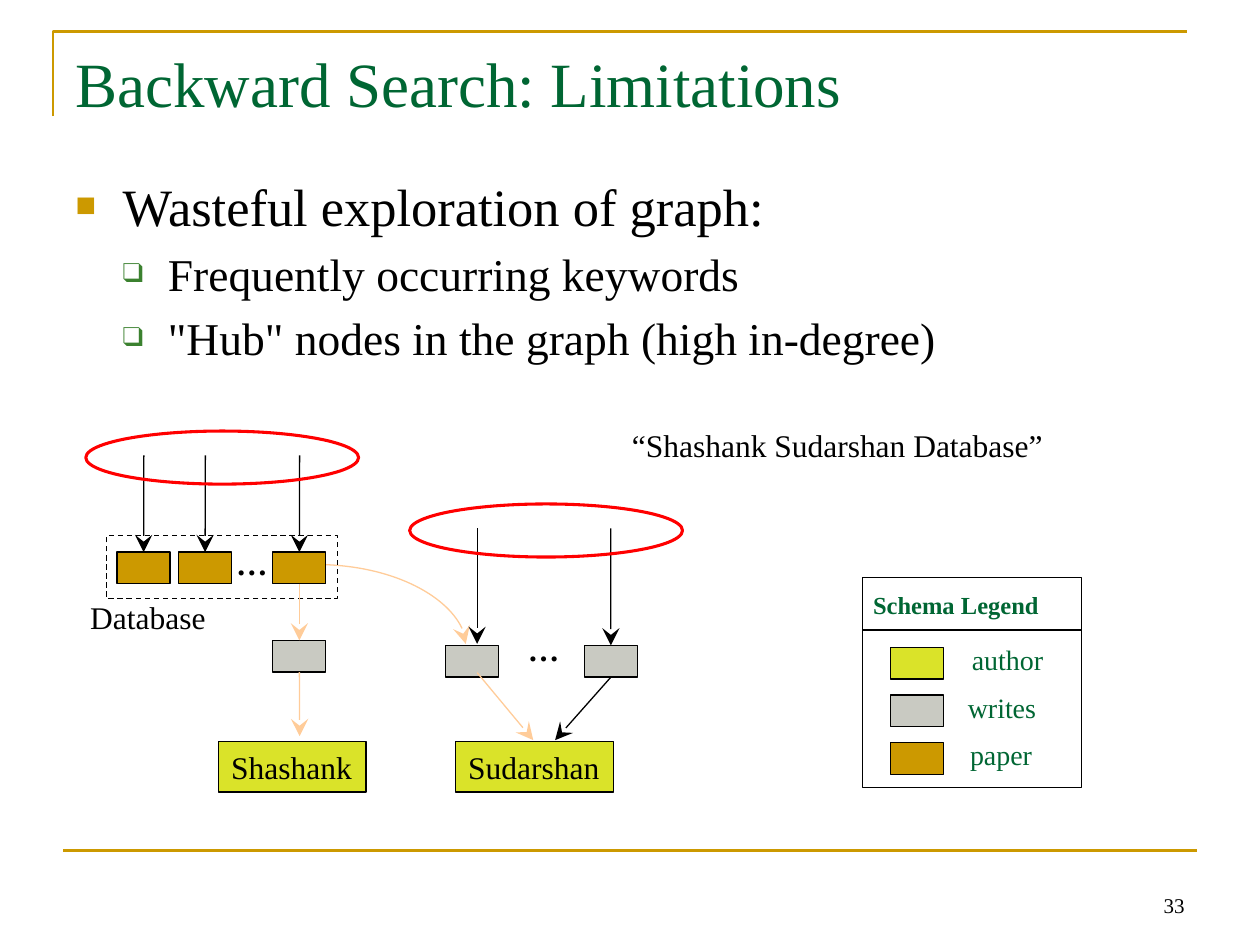
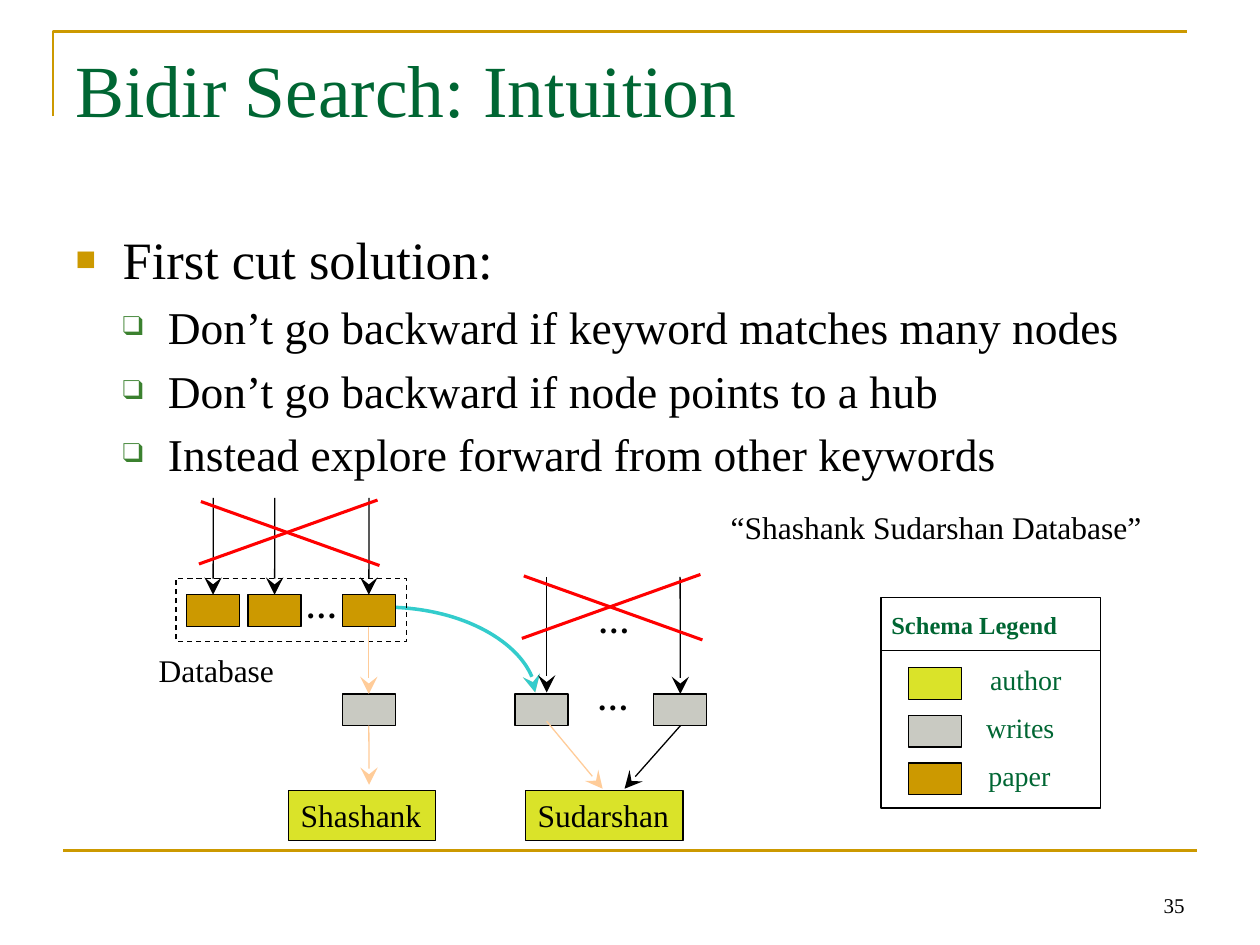
from dataclasses import dataclass
from typing import NamedTuple

import lxml.etree
import pptx
import pptx.dml.color
import pptx.enum.dml
import pptx.enum.shapes
import pptx.enum.text
import pptx.oxml.ns
import pptx.shapes.autoshape
import pptx.shapes.connector
import pptx.slide
import pptx.text.text
import pptx.util

FONT = "Times New Roman"
GOLD, GREEN, LIME, GREY = "CC9900", "006633", "DAE329", "C9CAC2"
BLACK, RED, PEACH, CYAN = "000000", "FF0000", "FFCC99", "33CCCC"
TILE_WIDTH, TILE_HEIGHT = 1.07, 0.64

Shape = pptx.shapes.autoshape.Shape
Connector = pptx.shapes.connector.Connector
Slide = pptx.slide.Slide
Preset = pptx.enum.shapes.MSO_SHAPE
Align = pptx.enum.text.PP_ALIGN
Anchor = pptx.enum.text.MSO_ANCHOR


class Spot(NamedTuple):
    """A place on the slide, in centimetres."""
    x: float
    y: float

    def shifted(self, right: float, down: float) -> "Spot":
        return Spot(self.x + right, self.y + down)


class Bullet(NamedTuple):
    character: str
    color: str
    percent: int
    margin: float
    indent: float
    text_size: int


class LegendRow(NamedTuple):
    label: str
    color: str
    label_left: float
    label_width: float


@dataclass(frozen=True)
class SearchSlide:
    title: str
    title_size: int
    body_top: float
    points: tuple[str, ...]
    paper_frame: Spot
    writes_tops: tuple[float, float, float]
    database_label: Spot
    query: Spot
    legend: Spot
    number: str
    curves: tuple[tuple[str, float], ...]


BULLETS = (Bullet("■", GOLD, 65, 0.95, -0.95, 30), Bullet("❑", "3B812F", 60, 1.86, -0.91, 26))
LEGEND_ROWS = (LegendRow("author", LIME, 1.93, 1.98), LegendRow("writes", GREY, 1.86, 1.9),
               LegendRow("paper", GOLD, 1.9, 1.78))
LIMITATIONS = SearchSlide(
    "Backward Search: Limitations", 36, 3.38,
    ("Wasteful exploration of graph:", "Frequently occurring keywords",
     '"Hub" nodes in the graph (high in-degree)'),
    Spot(2.15, 10.8), (12.91, 13.01, 13.01), Spot(1.57, 11.93), Spot(12.49, 8.46),
    Spot(17.39, 11.64), "33", ((PEACH, 0.75),))
INTUITION = SearchSlide(
    "Bidir Search: Intuition", 42, 4.45,
    ("First cut solution:", "Don’t go backward if keyword matches many nodes",
     "Don’t go backward if node points to a hub", "Instead explore forward from other keywords"),
    Spot(3.55, 11.66), (13.99, 13.99, 13.99), Spot(2.95, 13.0), Spot(14.48, 10.11),
    Spot(17.76, 12.05), "35", ((PEACH, 0.75), (CYAN, 2)))


def rgb(color: str) -> pptx.dml.color.RGBColor:
    return pptx.dml.color.RGBColor.from_string(color)


def add_xml(parent: lxml.etree._Element, tag: str, **attributes: str) -> lxml.etree._Element:
    return lxml.etree.SubElement(parent, pptx.oxml.ns.qn(tag), attributes)


def format_runs(paragraph: pptx.text.text._Paragraph, size: float, color: str,
                bold: bool = False) -> None:
    for run in paragraph.runs:
        run.font.name = FONT
        run.font.size = pptx.util.Pt(size)
        run.font.bold = bold
        run.font.color.rgb = rgb(color)


def place(shape: Shape, left: float, top: float, width: float, height: float) -> None:
    shape.left, shape.top = pptx.util.Cm(left), pptx.util.Cm(top)
    shape.width, shape.height = pptx.util.Cm(width), pptx.util.Cm(height)


def outline(shape: Shape, color: str, width: float, fill: str | None = None) -> None:
    shape.shadow.inherit = False
    shape.line.color.rgb = rgb(color)
    shape.line.width = pptx.util.Pt(width)
    if fill:
        shape.fill.solid()
        shape.fill.fore_color.rgb = rgb(fill)
    else:
        shape.fill.background()


def add_outlined(slide: Slide, spot: Spot, width: float, height: float, fill: str | None = None,
                 color: str = BLACK, weight: float = 0.75,
                 preset: Preset = Preset.RECTANGLE) -> Shape:
    shape = slide.shapes.add_shape(preset, *map(pptx.util.Cm, (*spot, width, height)))
    outline(shape, color, weight, fill)
    return shape


def add_tile(slide: Slide, spot: Spot, color: str) -> Shape:
    return add_outlined(slide, spot, TILE_WIDTH, TILE_HEIGHT, color)


def set_label(shape: Shape, text: str, size: float = 18, color: str = BLACK,
              bold: bool = False, align: Align = Align.LEFT) -> None:
    """Write one unwrapped line in the shape."""
    frame = shape.text_frame
    frame.text = text
    frame.word_wrap = False
    frame.vertical_anchor = Anchor.TOP
    frame.paragraphs[0].alignment = align
    format_runs(frame.paragraphs[0], size, color, bold)


def add_label(slide: Slide, spot: Spot, width: float, text: str, size: float = 18,
              color: str = BLACK, bold: bool = False, align: Align = Align.LEFT) -> None:
    height = size * 0.042 + 0.26
    shape = slide.shapes.add_textbox(*map(pptx.util.Cm, (*spot, width, height)))
    set_label(shape, text, size, color, bold, align)


def add_line(slide: Slide, start: Spot | Shape, end: Spot | Shape, color: str = BLACK,
             weight: float = 0.75, arrow: bool = False, curved: bool = False) -> Connector:
    """Draw from a spot or a shape's bottom to a spot or a shape's top."""
    kinds = pptx.enum.shapes.MSO_CONNECTOR
    ends = [spot if isinstance(spot, Spot) else Spot(0, 0) for spot in (start, end)]
    connector = slide.shapes.add_connector(
        kinds.CURVE if curved else kinds.STRAIGHT,
        *(pptx.util.Cm(length) for spot in ends for length in spot))
    if not isinstance(start, Spot):
        connector.begin_connect(start, 2)
    if not isinstance(end, Spot):
        connector.end_connect(end, 0)
    connector.line.color.rgb = rgb(color)
    connector.line.width = pptx.util.Pt(weight)
    properties = connector._element.spPr
    if curved:
        properties.find(pptx.oxml.ns.qn("a:prstGeom")).set("prst", "curvedConnector2")
    if arrow:
        add_xml(properties.find(pptx.oxml.ns.qn("a:ln")), "a:tailEnd",
                type="stealth", w="lg", len="lg")
    add_xml(properties, "a:effectLst")
    return connector


def add_bands(slide: Slide) -> None:
    """Draw the gold rules and hand them to the slide's layout."""
    corner = [Spot(1.07, 2.34), Spot(1.07, 0.64), Spot(23.93, 0.64)]
    first, *rest = [tuple(map(pptx.util.Cm, spot)) for spot in corner]
    builder = slide.shapes.build_freeform(*first)
    builder.add_line_segments(rest, close=False)
    bracket = builder.convert_to_shape()
    outline(bracket, GOLD, 1.5)
    footer_rule = add_line(slide, Spot(1.27, 17.15), Spot(24.13, 17.15), GOLD, 1.5)
    for band in (bracket, footer_rule):
        slide.slide_layout.shapes._spTree.append(band._element)


def fill_placeholders(slide: Slide, content: SearchSlide) -> None:
    title, body = slide.placeholders
    place(title, 1.27, 0.76, 22.86, 3.18)
    place(body, 1.27, content.body_top, 22.86, 12.57)
    title.text_frame.text = content.title
    body.text_frame.text = "\n".join(content.points)
    for shape in (title, body):
        shape.text_frame.auto_size = pptx.enum.text.MSO_AUTO_SIZE.NONE
        shape.text_frame.vertical_anchor = Anchor.TOP
    heading = title.text_frame.paragraphs[0]
    heading.alignment = Align.LEFT
    format_runs(heading, content.title_size, GREEN)
    for index, paragraph in enumerate(body.text_frame.paragraphs):
        paragraph.level = min(index, 1)
        bullet = BULLETS[paragraph.level]
        format_runs(paragraph, bullet.text_size, BLACK)
        properties = paragraph._p.get_or_add_pPr()
        properties.set("marL", str(pptx.util.Cm(bullet.margin)))
        properties.set("indent", str(pptx.util.Cm(bullet.indent)))
        add_xml(add_xml(properties, "a:buClr"), "a:srgbClr", val=bullet.color)
        add_xml(properties, "a:buSzPct", val=str(bullet.percent * 1000))
        add_xml(properties, "a:buFont", typeface=FONT)
        add_xml(properties, "a:buChar", char=bullet.character)


def add_number(slide: Slide, number: str) -> None:
    box = slide.shapes.add_textbox(*map(pptx.util.Cm, (18.2, 17.35, 5.93, 1.27)))
    set_label(box, number, 12, align=Align.RIGHT)
    box.text_frame.word_wrap = True
    box.text_frame.vertical_anchor = Anchor.BOTTOM


def add_legend(slide: Slide, corner: Spot) -> None:
    add_outlined(slide, corner, 4.42, 4.24)
    add_line(slide, corner.shifted(0, 1.06), corner.shifted(4.42, 1.06))
    add_label(slide, corner.shifted(-0.04, 0.13), 3.89, "Schema Legend", 14, GREEN, True)
    for index, row in enumerate(LEGEND_ROWS):
        top = 1.41 + 0.96 * index
        add_tile(slide, corner.shifted(0.56, top), row.color)
        add_label(slide, corner.shifted(row.label_left, top - 0.22), row.label_width,
                  row.label, 16, GREEN, align=Align.CENTER)


def add_author(slide: Slide, spot: Spot, width: float, name: str) -> None:
    set_label(add_outlined(slide, spot, width, 1.02, LIME), name)


def add_graph(slide: Slide, content: SearchSlide) -> None:
    """Draw papers, writes tuples and authors with the edges between them."""
    frame = content.paper_frame
    left = frame.x
    hub_top = content.writes_tops[1]
    author_top = hub_top + 1.94
    for color, weight in content.curves:
        add_line(slide, frame.shifted(4.2, 0.58), Spot(left + 7.24, hub_top - 0.03),
                 color, weight, arrow=True, curved=True)
    border = add_outlined(slide, frame, 4.65, 1.27)
    border.line.dash_style = pptx.enum.dml.MSO_LINE.DASH
    papers = [add_tile(slide, frame.shifted(right, 0.33), GOLD) for right in (0.21, 1.45, 3.35)]
    writes = [add_tile(slide, Spot(left + right, top), GREY)
              for right, top in zip((3.35, 6.83, 9.63), content.writes_tops)]
    add_author(slide, Spot(left + 2.26, author_top), 2.97, "Shashank")
    add_author(slide, Spot(left + 7.04, author_top), 3.18, "Sudarshan")

    for paper, right in zip(papers, (0.75, 1.99, 3.89)):
        add_line(slide, frame.shifted(right, -1.62), paper, arrow=True)
    hub_arrow_x = left + 7.47
    last_arrow_x = left + 10.16
    add_line(slide, Spot(hub_arrow_x, hub_top - 2.36), Spot(hub_arrow_x, hub_top - 0.03),
             arrow=True)
    add_line(slide, Spot(last_arrow_x, hub_top - 2.36), writes[2], arrow=True)

    add_line(slide, papers[2], writes[0], PEACH, arrow=True)
    add_line(slide, writes[0], Spot(left + 3.89, author_top - 0.11), PEACH, arrow=True)
    add_line(slide, Spot(hub_arrow_x, hub_top + 0.55), Spot(left + 8.6, author_top - 0.03),
             PEACH, arrow=True)
    add_line(slide, writes[2], Spot(left + 9.04, author_top - 0.03), arrow=True)

    for dots in (frame.shifted(2.36, 0.05), Spot(left + 8.24, hub_top - 0.43)):
        add_label(slide, dots, 1.14, "…", bold=True)
    add_label(slide, content.database_label, 2.87, "Database")
    add_label(slide, content.query, 8.89, "“Shashank Sudarshan Database”")


def add_cross(slide: Slide, corner: Spot) -> None:
    width, height = 3.6, 1.29
    add_line(slide, corner.shifted(0.04, 0.03), corner.shifted(width + 0.04, height + 0.03),
             RED, 1.75)
    add_line(slide, corner.shifted(0, height), corner.shifted(width, 0), RED, 1.75)


def add_search_slide(presentation: pptx.presentation.Presentation,
                     content: SearchSlide) -> Slide:
    slide = presentation.slides.add_slide(presentation.slide_layouts[1])
    fill_placeholders(slide, content)
    add_graph(slide, content)
    add_legend(slide, content.legend)
    add_number(slide, content.number)
    return slide


def main() -> None:
    presentation = pptx.Presentation()
    presentation.slide_width = pptx.util.Cm(25.4)
    presentation.slide_height = pptx.util.Cm(19.05)

    limitations = add_search_slide(presentation, LIMITATIONS)
    add_bands(limitations)
    for corner in (Spot(1.73, 8.69), Spot(8.26, 10.16)):
        add_outlined(limitations, corner, 5.5, 1.07, None, RED, 1.75, Preset.OVAL)

    intuition = add_search_slide(presentation, INTUITION)
    for corner in (Spot(4.01, 10.08), Spot(10.52, 11.58)):
        add_cross(intuition, corner)
    add_label(intuition, Spot(11.81, 12.01), 1.14, "…", bold=True)

    presentation.save("out.pptx")


if __name__ == "__main__":
    main()
